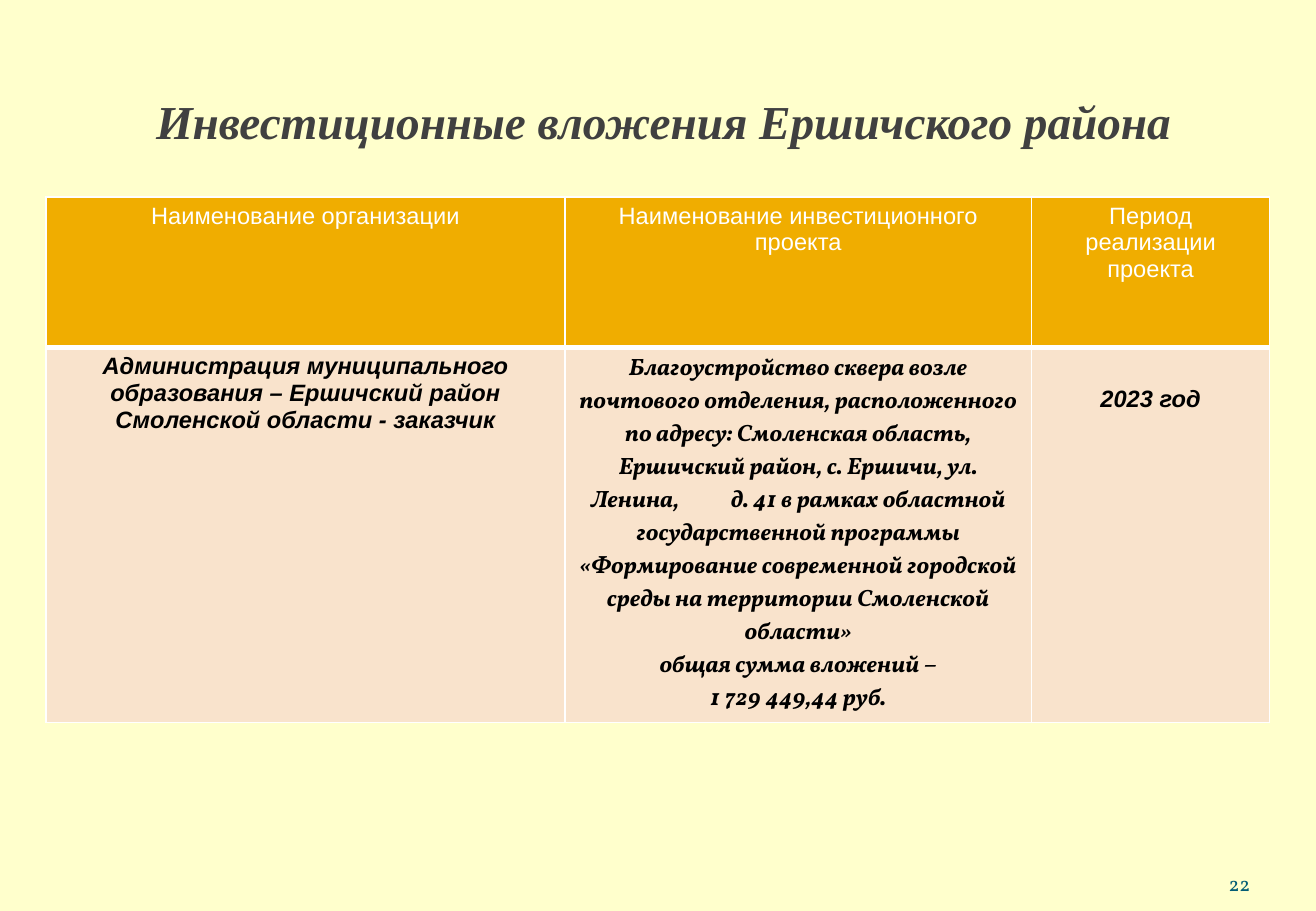
from dataclasses import dataclass

from lxml.etree import SubElement
from pptx import Presentation
from pptx.dml.color import RGBColor
from pptx.enum.text import MSO_ANCHOR as Anchor, PP_ALIGN as Align
from pptx.oxml.ns import qn
from pptx.util import Inches, Pt


@dataclass(frozen=True)
class Theme:
    """Colours, fonts and type sizes of the slide."""
    background: str = "FFFFCC"
    title: str = "404040"
    number: str = "045D75"
    header_fill: str = "F0AD00"
    body_fill: str = "F9E3CC"
    white: str = "FFFFFF"
    black: str = "000000"
    sans: str = "Arial"
    serif: str = "Times New Roman"
    accent: str = "Vollkorn"
    title_size: int = 28
    table_size: int = 14
    number_size: int = 12


THEME = Theme()
COLUMNS = (4.27, 3.84, 1.96)
ROWS = (1.24, 3.09)
HEADERS = (
    "Наименование организации",
    "Наименование инвестиционного проекта",
    "Период реализации проекта",
)
CUSTOMER = ("Администрация муниципального образования – Ершичский район "
            "Смоленской области - заказчик")
ADDRESS = ("Благоустройство сквера возле почтового отделения, расположенного по адресу: "
           "Смоленская область, Ершичский район, с. Ершичи, ул. Ленина,")
PROGRAMME = ("д. 41 в рамках областной государственной программы «Формирование современной "
             "городской среды на территории Смоленской области»")


def add_text(para, text, *, font, size, color, bold=False, italic=False,
             align=Align.CENTER, spacing=None):
    """Append a formatted run to a paragraph, with optional letter spacing in points."""
    para.alignment = align
    span = para.add_run()
    span.text = text
    span.font.name = font
    span.font.size = Pt(size)
    span.font.bold = bold
    span.font.italic = italic
    span.font.color.rgb = RGBColor.from_string(color)
    if spacing:
        span.font._element.set("spc", str(spacing * 100))


def add_title(page, text):
    """Place and fill the title placeholder."""
    title = page.shapes.title
    title.left, title.top = Inches(0.47), Inches(0.44)
    title.width, title.height = Inches(9.98), Inches(1.1)
    title.text_frame.vertical_anchor = Anchor.MIDDLE
    add_text(title.text_frame.paragraphs[0], text, font=THEME.serif,
             size=THEME.title_size, color=THEME.title, bold=True, italic=True)


def add_page_number(page, text):
    """Add the page number at the lower right."""
    box = page.shapes.add_textbox(Inches(9.39), Inches(7.02), Inches(0.9), Inches(0.4))
    frame = box.text_frame
    frame.word_wrap = True
    frame.vertical_anchor = Anchor.BOTTOM
    frame.margin_left = frame.margin_right = 0
    add_text(frame.paragraphs[0], text, font=THEME.accent, size=THEME.number_size,
             color=THEME.number, align=Align.RIGHT)


def style_cell(cell, fill, bottom=1):
    """Set the margins, white borders and fill of a table cell."""
    cell.margin_left = cell.margin_right = Inches(0.11)
    cell.margin_top = cell.margin_bottom = Inches(0.05)
    properties = cell._tc.get_or_add_tcPr()
    for side, width in (("L", 1), ("R", 1), ("T", 1), ("B", bottom)):
        line = SubElement(properties, qn(f"a:ln{side}"), w=str(Pt(width)))
        solid = SubElement(line, qn("a:solidFill"))
        SubElement(solid, qn("a:srgbClr"), val=THEME.white)
    cell.fill.solid()
    cell.fill.fore_color.rgb = RGBColor.from_string(fill)


def add_table(page):
    """Add the table of investment projects."""
    table = page.shapes.add_table(
        len(ROWS), len(COLUMNS), Inches(0.38), Inches(1.62),
        Inches(sum(COLUMNS)), Inches(sum(ROWS))).table
    for column, width in zip(table.columns, COLUMNS):
        column.width = Inches(width)
    for row, height in zip(table.rows, ROWS):
        row.height = Inches(height)

    for index, header in enumerate(HEADERS):
        cell = table.cell(0, index)
        style_cell(cell, THEME.header_fill, bottom=3)
        add_text(cell.text_frame.paragraphs[0], header, font=THEME.sans,
                 size=THEME.table_size, color=THEME.white)
        style_cell(table.cell(1, index), THEME.body_fill)

    body = dict(size=THEME.table_size, color=THEME.black, bold=True, italic=True)
    customer, project, period = (table.cell(1, index) for index in range(len(COLUMNS)))
    add_text(customer.text_frame.paragraphs[0], CUSTOMER, font=THEME.sans, **body)

    frame = project.text_frame
    para = frame.paragraphs[0]
    add_text(para, ADDRESS, font=THEME.accent, **body)
    add_text(para, " ", font=THEME.accent, spacing=28, **body)
    add_text(para, PROGRAMME, font=THEME.accent, **body)
    for text in ("общая сумма вложений –", "1 729 449,44 руб."):
        add_text(frame.add_paragraph(), text, font=THEME.accent, **body)

    period.margin_top = Inches(0.32)
    add_text(period.text_frame.paragraphs[0], "2023 год", font=THEME.sans, **body)


def main():
    """Build and save the slide."""
    deck = Presentation()
    deck.slide_width, deck.slide_height = Inches(10.83), Inches(7.5)
    page = deck.slides.add_slide(deck.slide_layouts[5])
    page.background.fill.solid()
    page.background.fill.fore_color.rgb = RGBColor.from_string(THEME.background)
    add_title(page, "Инвестиционные вложения Ершичского района")
    add_page_number(page, "22")
    add_table(page)
    deck.save("out.pptx")


if __name__ == "__main__":
    main()
